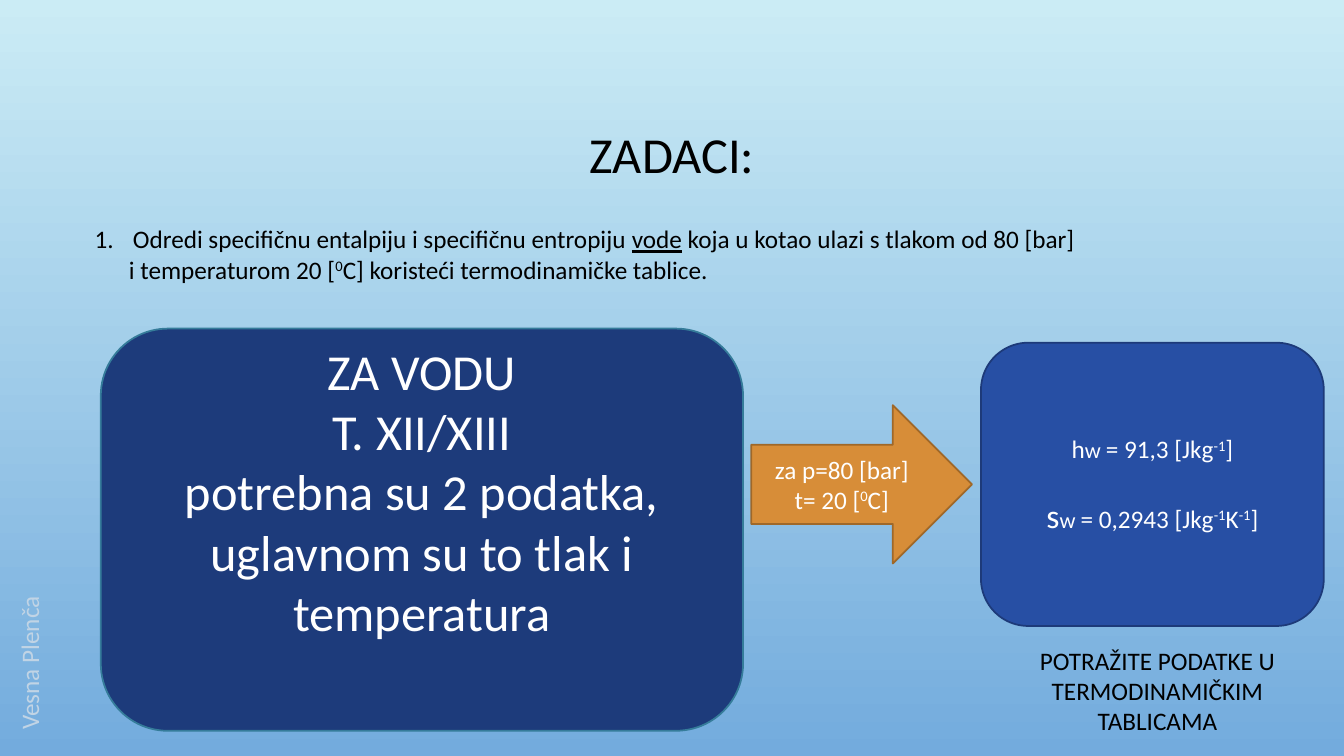
import pptx
import pptx.util
import pptx.dml.color
import pptx.enum.shapes
import pptx.enum.text
import pptx.oxml.ns
from lxml import etree

Inches, Pt = pptx.util.Inches, pptx.util.Pt
SHAPE = pptx.enum.shapes.MSO_SHAPE
ALIGN = pptx.enum.text.PP_ALIGN
ANCHOR = pptx.enum.text.MSO_ANCHOR

COLORS = {
    "sky_top": "CBECF5", "sky_bottom": "73ABDD",
    "black": "000000", "white": "FFFFFF", "author": "C1D4E5",
    "navy": "1D3B7B", "navy_line": "357C9A",
    "orange": "D78D38", "orange_line": "9F6829",
    "blue": "274FA4", "blue_line": "1D3A79",
}
SUP = {"sup": True}
SMALL = {"size": 16}


def rgb(name):
    return pptx.dml.color.RGBColor.from_string(COLORS[name])


def add_runs(p, parts, size, color):
    """Each part is a plain string or a (text, format) pair."""
    for part in parts:
        text, fmt = (part, {}) if isinstance(part, str) else part
        r = p.add_run()
        r.text = text
        r.font.name = "Calibri"
        r.font.size = Pt(fmt.get("size", size))
        r.font.color.rgb = rgb(color)
        if fmt.get("underline"):
            r.font.underline = True
        if fmt.get("sup"):
            r.font._element.set("baseline", "30000")


def write_text(sp, paragraphs, size=18, color="black", align=ALIGN.CENTER,
               anchor=ANCHOR.TOP, gap=0, line_spacing=None, bottom=0.05):
    tf = sp.text_frame
    tf.word_wrap = True
    tf.vertical_anchor = anchor
    tf.margin_bottom = Inches(bottom)
    for i, parts in enumerate(paragraphs):
        p = tf.add_paragraph() if i else tf.paragraphs[0]
        p.alignment = align
        if line_spacing:
            p.line_spacing = line_spacing
        if i and gap:
            p.space_before = Pt(gap)
        add_runs(p, parts, size, color)
    return tf


def add_text(s, box, paragraphs, **fmt):
    sp = s.shapes.add_textbox(*map(Inches, box))
    return write_text(sp, paragraphs, **fmt)


def add_block(s, kind, box, fill, paragraphs, **fmt):
    sp = s.shapes.add_shape(kind, *map(Inches, box))
    sp.shadow.inherit = False
    sp.fill.solid()
    sp.fill.fore_color.rgb = rgb(fill)
    sp.line.color.rgb = rgb(fill + "_line")
    sp.line.width = Pt(1.25)
    write_text(sp, paragraphs, color="white", anchor=ANCHOR.MIDDLE, **fmt)


def set_indent(p, left, first=0, numbered=False):
    pPr = p._p.get_or_add_pPr()
    pPr.set("marL", str(Inches(left)))
    pPr.set("indent", str(Inches(first)))
    if numbered:
        etree.SubElement(pPr, pptx.oxml.ns.qn("a:buAutoNum"), type="arabicPeriod")


def paint_background(s):
    fill = s.background.fill
    fill.gradient()
    fill.gradient_angle = 270
    for stop, name in zip(fill.gradient_stops, ("sky_top", "sky_bottom")):
        stop.color.rgb = rgb(name)


def main():
    prs = pptx.Presentation()
    prs.slide_width, prs.slide_height = Inches(13.33), Inches(7.5)
    s = prs.slides.add_slide(prs.slide_layouts[6])
    paint_background(s)

    # Title and author
    add_text(s, (1, 0.68, 11.33, 1.75), [["ZADACI:"]], size=36,
             anchor=ANCHOR.MIDDLE, line_spacing=0.9)
    tf = add_text(s, (0.09, 5.26, 0.5, 2.08), [["Vesna Plenča"]],
                  color="author", align=ALIGN.LEFT)
    tf._txBody.bodyPr.set("vert", "vert270")

    # Numbered task
    tf = add_text(s, (0.84, 2.17, 11.88, 1.92), [
        ["Odredi specifičnu entalpiju i specifičnu entropiju ",
         ("vode", {"underline": True}),
         " koja u kotao ulazi s tlakom od 80 [bar]"],
        ["i temperaturom 20 [", ("0", SUP),
         "C] koristeći termodinamičke tablice."],
    ], align=ALIGN.LEFT)
    set_indent(tf.paragraphs[0], 0.38, -0.38, numbered=True)
    set_indent(tf.paragraphs[1], 0.34)

    # Given data, arrow and results
    add_block(s, SHAPE.ROUNDED_RECTANGLE, (1, 3.26, 6.37, 3.99), "navy", [
        ["ZA VODU"], ["T. XII/XIII"], ["potrebna su 2 podatka,"],
        ["uglavnom su to tlak i temperatura"],
    ], size=36, bottom=0.82)
    add_block(s, SHAPE.RIGHT_ARROW, (7.45, 4.02, 2.19, 1.57), "orange", [
        ["za p=80 [bar]"], ["t= 20 [", ("0", SUP), "C]"],
    ])
    add_block(s, SHAPE.ROUNDED_RECTANGLE, (9.73, 3.4, 3.4, 2.81), "blue", [
        ["h", ("w ", SMALL), "= 91,3 [Jkg", ("-1", SUP), "]"],
        [("s", {"size": 24}), ("w ", SMALL), "= 0,2943 [Jkg", ("-1", SUP),
         "K", ("-1", SUP), "]"],
    ], gap=22)

    # Hint under the results
    add_text(s, (9.96, 6.35, 3.04, 1.01),
             [["POTRAŽITE PODATKE U TERMODINAMIČKIM TABLICAMA"]])

    prs.save("out.pptx")


if __name__ == "__main__":
    main()
